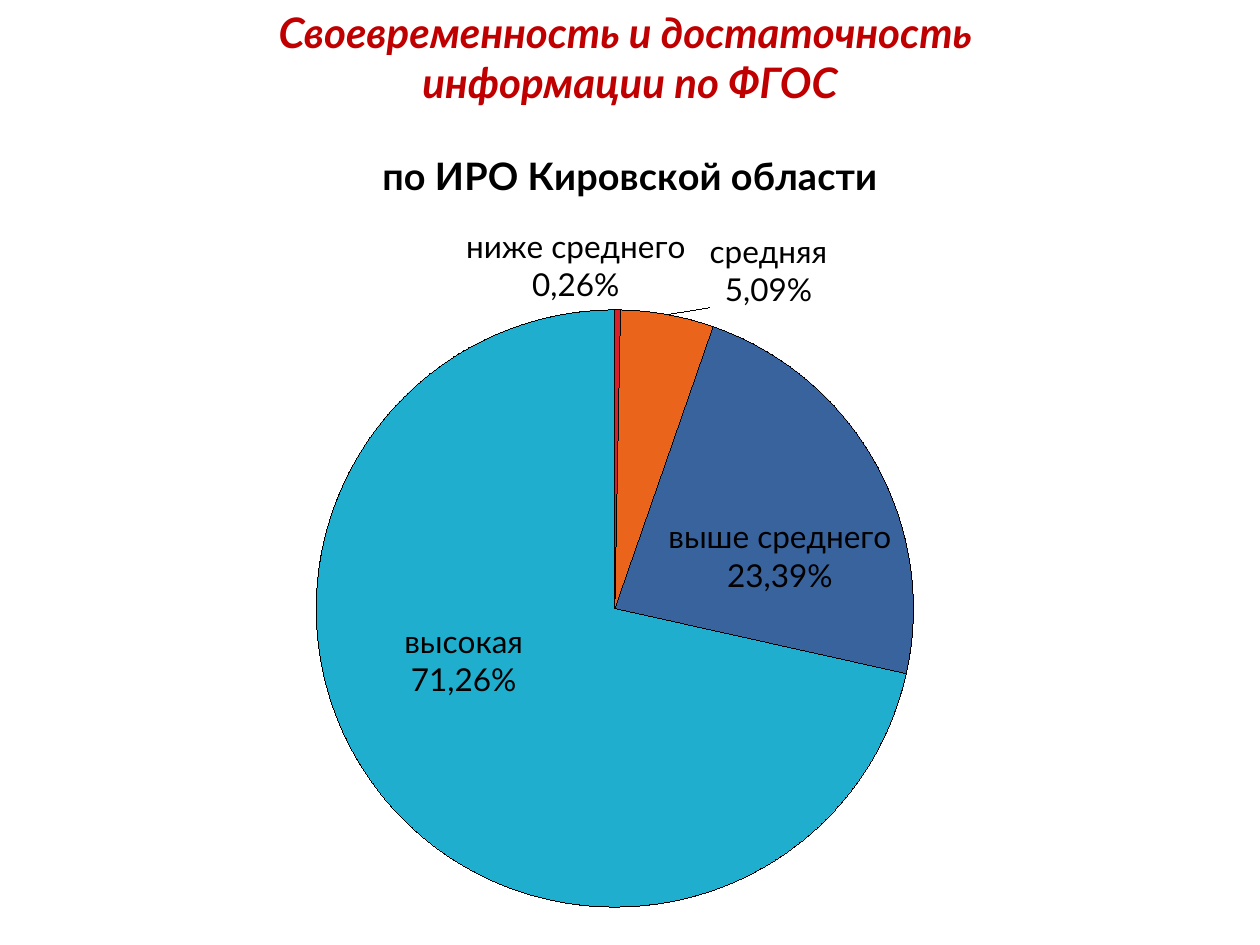
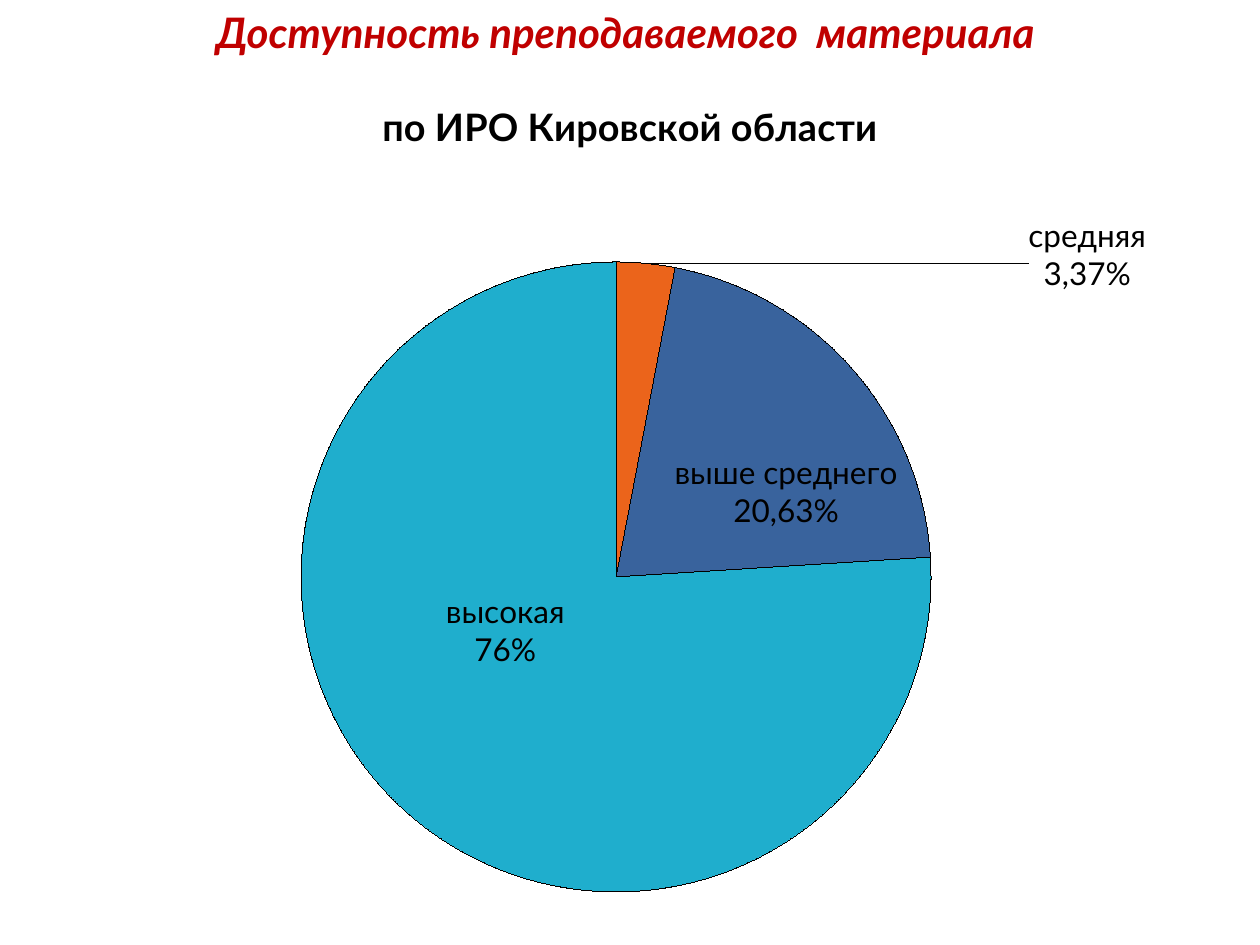
import math
from dataclasses import dataclass
from pptx import Presentation
from pptx import util as u
from pptx.chart.data import CategoryChartData
from pptx.dml.color import RGBColor
from pptx.enum import chart as chart_enum, text
from pptx.oxml import parse_xml
from pptx.oxml.ns import nsdecls


@dataclass(frozen=True)
class Theme:
    font: str = "Lato"
    heading_color: str = "C00000"
    ink: str = "000000"
    slices: tuple = ("2DA2BF", "DA1F28", "EB641B", "39639D", "1FAECD")
    heading_size: float = 24
    chart_title_size: float = 21.6
    label_size: float = 18


@dataclass(frozen=True)
class Box:
    left: float
    top: float
    width: float
    height: float

    def lengths(self):
        return [u.Inches(side) for side in (self.left, self.top, self.width, self.height)]


@dataclass(frozen=True)
class Pie:
    center_x: float
    center_y: float
    radius: float


@dataclass(frozen=True)
class SliceLabel:
    percent: str
    x: float
    y: float


THEME = Theme()
CHART_TITLE = "по ИРО Кировской области"
LEVELS = ("низкая", "ниже среднего", "средняя", "выше среднего", "высокая")
SLIDE_WIDTH, SLIDE_HEIGHT = 10, 7.5
EDGE_MODES = '<c:xMode val="edge"/><c:yMode val="edge"/>'


def style_font(font, size, color, bold=False, italic=False):
    font.name = THEME.font
    font.size = u.Pt(size)
    font.bold = bold
    font.italic = italic
    font.color.rgb = RGBColor.from_string(color)


def set_layout(parent, position, x, y, modes="", sizes=""):
    for previous in parent.xpath("c:layout"):
        parent.remove(previous)
    parent.insert(position, parse_xml(
        f'<c:layout {nsdecls("c")}><c:manualLayout>{modes}'
        f'<c:x val="{x:.4f}"/><c:y val="{y:.4f}"/>{sizes}</c:manualLayout></c:layout>'))


def add_heading(slide, box, lines):
    title = slide.shapes.title
    title.left, title.top, title.width, title.height = box.lengths()
    frame = title.text_frame
    frame.text = "\n".join(lines)
    frame.word_wrap = True
    frame.auto_size = text.MSO_AUTO_SIZE.NONE
    frame.vertical_anchor = text.MSO_ANCHOR.TOP
    for paragraph in frame.paragraphs:
        paragraph.alignment = text.PP_ALIGN.CENTER
        style_font(paragraph.font, THEME.heading_size, THEME.heading_color, True, True)


def add_chart_title(chart, box):
    chart.has_title = True
    title = chart.chart_title
    title.include_in_layout = False
    title.text_frame.text = CHART_TITLE
    run = title.text_frame.paragraphs[0].runs[0]
    style_font(run.font, THEME.chart_title_size, THEME.ink, True)
    set_layout(title._element, 1, 2.98 / box.width, 0.18 / box.height, EDGE_MODES)


def place_plot(chart, box, pie):
    diameter = 2 * pie.radius
    set_layout(
        chart._chartSpace.chart.plotArea, 0,
        (pie.center_x - pie.radius) / box.width, (pie.center_y - pie.radius) / box.height,
        '<c:layoutTarget val="inner"/>' + EDGE_MODES,
        f'<c:w val="{diameter / box.width:.4f}"/><c:h val="{diameter / box.height:.4f}"/>')


def add_slice_label(point, level, label, box, pie, angle):
    data_label = point.data_label
    frame = data_label.text_frame
    frame.text = f"{level}\n{label.percent}"
    for paragraph in frame.paragraphs:
        style_font(paragraph.runs[0].font, THEME.label_size, THEME.ink)
    data_label.position = chart_enum.XL_LABEL_POSITION.CENTER
    anchor_x = pie.center_x + pie.radius / 2 * math.sin(angle)
    anchor_y = pie.center_y - pie.radius / 2 * math.cos(angle)
    set_layout(frame._txBody.getparent().getparent(), 1,
               (label.x - anchor_x) / box.width, (label.y - anchor_y) / box.height)


def add_pie(slide, box, pie, values, labels):
    data = CategoryChartData()
    data.categories = LEVELS
    data.add_series(CHART_TITLE, values)
    frame = slide.shapes.add_chart(chart_enum.XL_CHART_TYPE.PIE, *box.lengths(), data)
    chart = frame.chart
    chart.has_legend = False
    style_font(chart.font, THEME.label_size, THEME.ink)
    add_chart_title(chart, box)
    place_plot(chart, box, pie)

    plot = chart.plots[0]
    plot.vary_by_categories = True
    series = plot.series[0]
    series.data_labels.show_value = False
    passed = 0
    for index, (level, value, color) in enumerate(zip(LEVELS, values, THEME.slices)):
        point = series.points[index]
        point.format.fill.solid()
        point.format.fill.fore_color.rgb = RGBColor.from_string(color)
        point.format.line.color.rgb = RGBColor.from_string(THEME.ink)
        if level in labels:
            angle = math.tau * (passed + value / 2) / sum(values)
            add_slice_label(point, level, labels[level], box, pie, angle)
        passed += value


def add_survey_slide(presentation, lines, heading_height, chart_top, pie, values, labels):
    slide = presentation.slides.add_slide(presentation.slide_layouts[5])
    add_pie(slide, Box(0, chart_top, SLIDE_WIDTH, SLIDE_HEIGHT - chart_top),
            pie, values, labels)
    add_heading(slide, Box(0, 0, SLIDE_WIDTH, heading_height), lines)


def main():
    presentation = Presentation()
    presentation.slide_width = u.Inches(SLIDE_WIDTH)
    presentation.slide_height = u.Inches(SLIDE_HEIGHT)
    add_survey_slide(
        presentation, ("Своевременность и достаточность ", "информации по ФГОС"), 0.91, 0.94,
        Pie(4.88, 3.89, 2.37), (0, 0.3, 5, 23, 71),
        {"ниже среднего": SliceLabel("0,26%", 4.57, 1.16),
         "средняя": SliceLabel("5,09%", 6.1, 1.2),
         "выше среднего": SliceLabel("23,39%", 6.19, 3.47),
         "высокая": SliceLabel("71,26%", 3.68, 4.3)})
    add_survey_slide(
        presentation, ("Доступность преподаваемого  материала ",), 0.5, 0.55,
        Pie(4.89, 4.03, 2.5), (0, 0, 3, 21, 76),
        {"средняя": SliceLabel("3,37%", 8.63, 1.47),
         "выше среднего": SliceLabel("20,63%", 6.24, 3.35),
         "высокая": SliceLabel("76%", 4.01, 4.45)})
    presentation.save("out.pptx")


if __name__ == "__main__":
    main()
